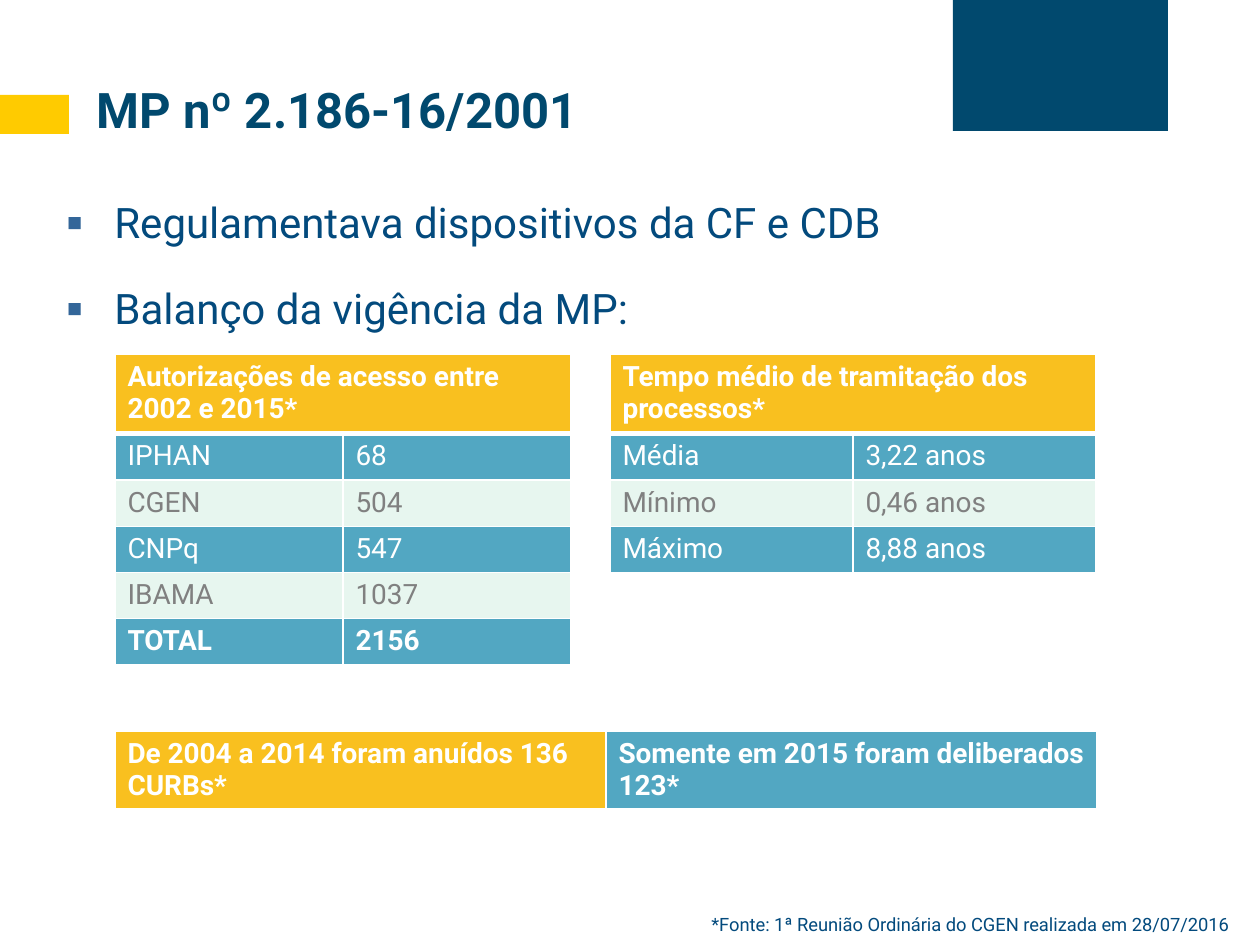
from lxml.etree import SubElement
from pptx import Presentation
from pptx.dml.color import RGBColor
from pptx.enum.shapes import MSO_SHAPE
from pptx.enum.text import PP_ALIGN
from pptx.oxml import parse_xml
from pptx.oxml.ns import nsdecls, qn
from pptx.util import Emu, Pt

COLORS = {
    "yellow": "FFCB00", "navy": "01496E", "text": "034A7D", "bullet": "336699",
    "header": "F9C01F", "teal": "52A7C2", "mint": "E7F6EF", "gray": "808080",
    "white": "FFFFFF",
}
FONT = "Roboto"
HEADER_HEIGHT = 79
ROW_HEIGHT = 46


def px(value):
    return Emu(round(value * 914400 / 126))


def color(name):
    return RGBColor.from_string(COLORS[name])


def style_text(paragraph, size, color_name, bold=False):
    for span in paragraph.runs:
        span.font.name = FONT
        span.font.size = Pt(size)
        span.font.bold = bold
        span.font.color.rgb = color(color_name)


def add_block(page, left, top, width, height, color_name):
    block = page.shapes.add_shape(
        MSO_SHAPE.RECTANGLE, px(left), px(top), px(width), px(height))
    block.shadow.inherit = False
    block.fill.solid()
    block.fill.fore_color.rgb = color(color_name)
    block.line.fill.background()


def add_text(page, left, top, width, height, text, size, color_name, bold=False):
    box = page.shapes.add_textbox(px(left), px(top), px(width), px(height))
    box.text_frame.word_wrap = True
    box.text_frame.text = text
    for paragraph in box.text_frame.paragraphs:
        style_text(paragraph, size, color_name, bold)
    return box.text_frame.paragraphs


def add_bullet(paragraph):
    properties = paragraph._p.get_or_add_pPr()
    properties.set("marL", str(px(48)))
    properties.set("indent", str(-px(48)))
    bullet_color = SubElement(properties, qn("a:buClr"))
    SubElement(bullet_color, qn("a:srgbClr"), val=COLORS["bullet"])
    SubElement(properties, qn("a:buFont"), typeface=FONT)
    SubElement(properties, qn("a:buChar"), char="▪")


def set_borders(cell, bottom_width):
    properties = cell._tc.get_or_add_tcPr()
    widths = {"lnL": 1, "lnR": 1, "lnT": 1, "lnB": bottom_width}
    for index, (side, width) in enumerate(widths.items()):
        properties.insert(index, parse_xml(
            f'<a:{side} {nsdecls("a")} w="{Pt(width)}"><a:solidFill>'
            f'<a:srgbClr val="{COLORS["white"]}"/></a:solidFill></a:{side}>'))


def fill_cell(cell, text, fill_name, color_name="white", bold=False, bottom=1):
    cell.text = text
    cell.fill.solid()
    cell.fill.fore_color.rgb = color(fill_name)
    style_text(cell.text_frame.paragraphs[0], 16, color_name, bold)
    set_borders(cell, bottom)


def add_grid(page, left, top, width, row_heights):
    table = page.shapes.add_table(
        len(row_heights), 2, px(left), px(top), px(width), px(sum(row_heights))).table
    for row, height in zip(table.rows, row_heights):
        row.height = px(height)
    return table


def add_data_table(page, left, width, title, records):
    heights = [HEADER_HEIGHT] + [ROW_HEIGHT] * len(records)
    table = add_grid(page, left, 354, width, heights)
    for column in range(2):
        fill_cell(table.cell(0, column), "", "header", bottom=3)
    table.cell(0, 0).merge(table.cell(0, 1))
    header = table.cell(0, 0)
    header.text = title
    style_text(header.text_frame.paragraphs[0], 16, "white", True)
    for row, record in enumerate(records, 1):
        fill_name, color_name = ("teal", "white") if row % 2 else ("mint", "gray")
        for column, value in enumerate(record):
            fill_cell(table.cell(row, column), value, fill_name, color_name,
                      bold=record[0] == "TOTAL")


def add_summary(page, left, width, statements):
    table = add_grid(page, left, 731, width, [HEADER_HEIGHT])
    for column, (text, fill_name) in enumerate(statements):
        fill_cell(table.cell(0, column), text, fill_name, bold=True, bottom=3)


def main():
    deck = Presentation()
    deck.slide_width, deck.slide_height = px(1260), px(945)
    page = deck.slides.add_slide(deck.slide_layouts[6])

    add_block(page, 0, 95, 69, 39, "yellow")
    add_block(page, 953, 0, 215, 131, "navy")

    topics = add_text(
        page, 54, 165, 1160, 159,
        "Regulamentava dispositivos da CF e CDB\nBalanço da vigência da MP:",
        24, "text")
    for topic in topics:
        topic.alignment = PP_ALIGN.JUSTIFY
        topic.line_spacing = 1.5
        add_bullet(topic)
    topics[1].space_before = Pt(5.8)

    add_text(page, 84, 73, 1042, 72, "MP nº 2.186-16/2001", 28, "navy", True)

    add_data_table(page, 115, 456, "Autorizações de acesso entre 2002 e 2015*", [
        ("IPHAN", "68"), ("CGEN", "504"), ("CNPq", "547"),
        ("IBAMA", "1037"), ("TOTAL", "2156")])
    add_data_table(page, 610, 486, "Tempo médio de tramitação dos processos*", [
        ("Média", "3,22 anos"), ("Mínimo", "0,46 anos"), ("Máximo", "8,88 anos")])
    add_summary(page, 115, 982, [
        ("De 2004 a 2014 foram anuídos 136 CURBs*", "header"),
        ("Somente em 2015 foram deliberados 123*", "teal")])

    source = add_text(
        page, 699, 896, 561, 49,
        "*Fonte: 1ª Reunião Ordinária do CGEN realizada em 28/07/2016", 10.5, "text")[0]
    source.alignment = PP_ALIGN.JUSTIFY
    source.line_spacing = 1.5

    deck.save("out.pptx")


if __name__ == "__main__":
    main()
